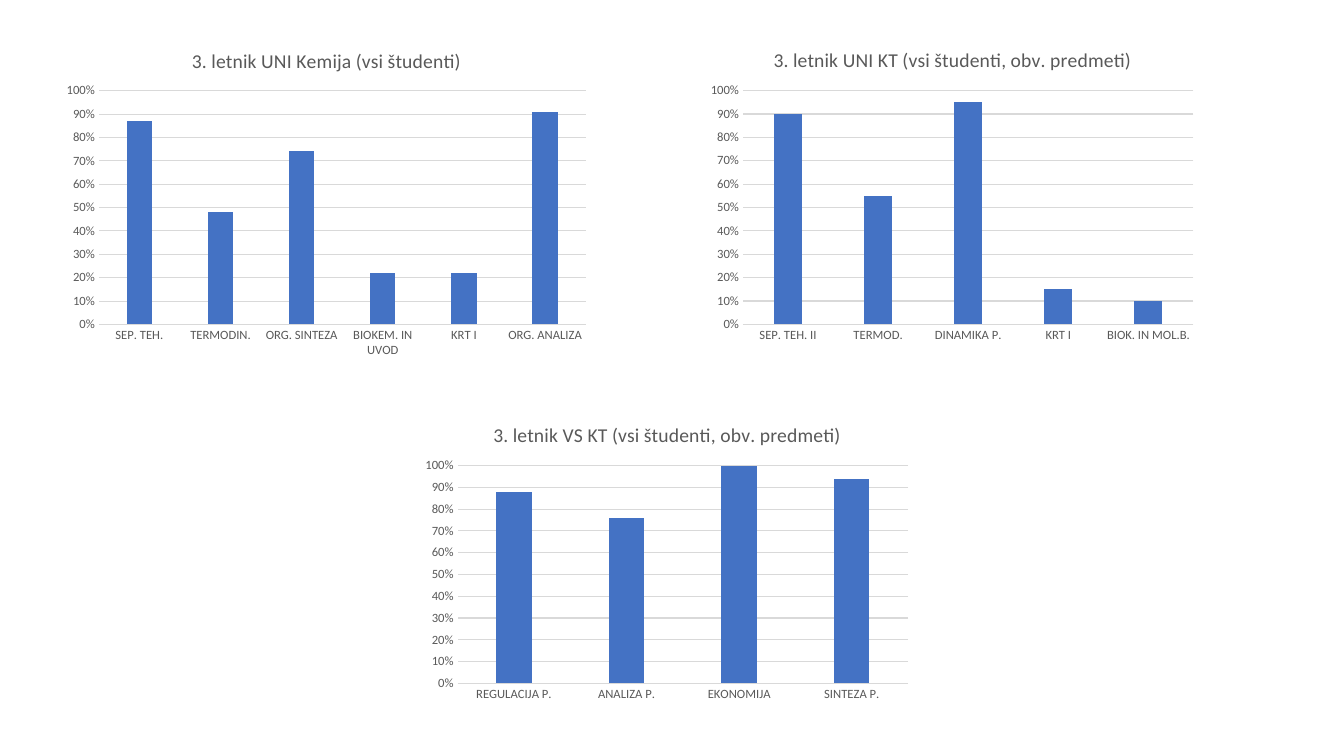
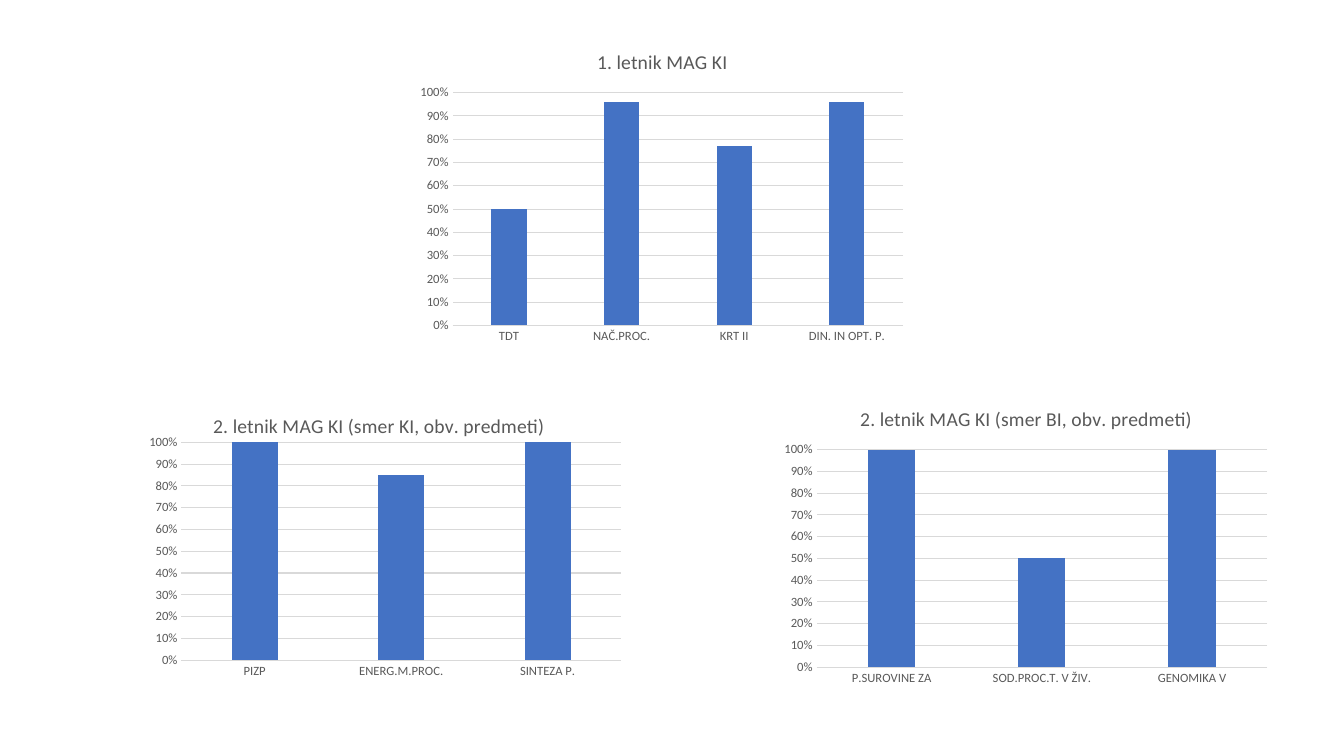
from dataclasses import dataclass

from pptx import Presentation
from pptx import util as u
from pptx.chart.data import CategoryChartData
from pptx.dml.color import RGBColor
from pptx.enum import chart as charts
from pptx.oxml import parse_xml
from pptx.oxml.ns import nsdecls, qn

SLIDE_WIDTH, SLIDE_HEIGHT = u.Inches(13.33), u.Inches(7.5)
FONT = "Calibri"
BLUE = RGBColor(0x44, 0x72, 0xC4)
GREY = RGBColor(0x59, 0x59, 0x59)
LIGHT_GREY = RGBColor(0xD9, 0xD9, 0xD9)

# Space around the plot, in inches: left, top, right, bottom
MARGINS = (0.42, 0.59, 0.11, 0.25)


@dataclass
class Panel:
    """One year's bar chart; box is left, top, width, height in percent of the slide."""
    title: str
    box: tuple
    shares: dict
    margins: tuple = MARGINS


THIRD_YEAR = [
    Panel("3. letnik UNI Kemija (vsi študenti)", (4.2, 4.13, 40.2, 44.13),
          {"SEP. TEH.": 0.87, "TERMODIN.": 0.48, "ORG. SINTEZA": 0.74,
           "BIOKEM. IN UVOD": 0.22, "KRT I": 0.22, "ORG. ANALIZA": 0.91},
          margins=(0.42, 0.59, 0.11, 0.4)),
    Panel("3. letnik VS KT (vsi študenti, obv. predmeti)", (30.9, 53.73, 37.5, 40),
          {"REGULACIJA P.": 0.88, "ANALIZA P.": 0.76, "EKONOMIJA": 1, "SINTEZA P.": 0.94}),
    Panel("3. letnik UNI KT (vsi študenti, obv. predmeti)", (52.13, 4.13, 37.5, 42.13),
          {"SEP. TEH. II": 0.9, "TERMOD.": 0.55, "DINAMIKA P.": 0.95,
           "KRT I": 0.15, "BIOK. IN MOL.B.": 0.1}),
]

MASTERS = [
    Panel("1. letnik MAG KI", (30.53, 4.4, 37.5, 42),
          {"TDT": 0.5, "NAČ.PROC.": 0.96, "KRT II": 0.77, "DIN. IN OPT. P.": 0.96}),
    Panel("2. letnik MAG KI (smer KI, obv. predmeti)", (9.45, 52.53, 37.5, 40),
          {"PIZP": 1, "ENERG.M.PROC.": 0.85, "SINTEZA P.": 1},
          margins=(0.54, 0.45, 0.1, 0.39)),
    Panel("2. letnik MAG KI (smer BI, obv. predmeti)", (57.61, 51.6, 37.5, 40),
          {"P.SUROVINE ZA": 1, "SOD.PROC.T. V ŽIV.": 0.5, "GENOMIKA V": 1}),
]


def style_font(font, size, color=GREY):
    font.name, font.size, font.bold = FONT, u.Pt(size), False
    font.color.rgb = color


def write_text(frame, content, size=14, color=GREY):
    frame.text = content
    style_font(frame.paragraphs[0].runs[0].font, size, color)


def style_line(line):
    line.color.rgb = LIGHT_GREY
    line.width = u.Pt(0.75)


def style_axes(chart):
    for axis in (chart.category_axis, chart.value_axis):
        axis.major_tick_mark = axis.minor_tick_mark = charts.XL_TICK_MARK.NONE
        style_font(axis.tick_labels.font, 9)
    style_line(chart.category_axis.format.line)

    values = chart.value_axis
    values.minimum_scale, values.maximum_scale, values.major_unit = 0, 1, 0.1
    values.tick_labels.number_format = "0%"
    values.tick_labels.number_format_is_linked = False
    values.format.line.fill.background()
    values.has_major_gridlines = True
    style_line(values.major_gridlines.format.line)


def place_plot(chart, width, height, margins):
    """Fix the inner plot area, leaving the margins free inside the chart."""
    left, top, right, bottom = (u.Inches(margin) for margin in margins)
    shares = {"x": left / width, "y": top / height,
              "w": (width - left - right) / width,
              "h": (height - top - bottom) / height}
    entries = "".join(f'<c:{key} val="{share:.4f}"/>' for key, share in shares.items())
    layout = parse_xml(
        f'<c:layout {nsdecls("c")}><c:manualLayout><c:layoutTarget val="inner"/>'
        f'<c:xMode val="edge"/><c:yMode val="edge"/>{entries}</c:manualLayout></c:layout>')
    plot_area = chart.plots[0]._element.getparent()
    for old_layout in plot_area.findall(qn("c:layout")):
        plot_area.remove(old_layout)
    plot_area.insert(0, layout)


def add_panel(slide, panel):
    left, top, width, height = (
        round(percent / 100 * side)
        for percent, side in zip(panel.box, (SLIDE_WIDTH, SLIDE_HEIGHT) * 2))
    data = CategoryChartData(number_format="0%")
    data.categories = list(panel.shares)
    data.add_series("Series 1", list(panel.shares.values()))
    chart = slide.shapes.add_chart(
        charts.XL_CHART_TYPE.COLUMN_CLUSTERED, left, top, width, height, data).chart

    style_font(chart.font, 10, RGBColor(0, 0, 0))
    chart.has_legend = False
    chart.has_title = True
    chart.chart_title.include_in_layout = False
    write_text(chart.chart_title.text_frame, panel.title)

    plot = chart.plots[0]
    plot.gap_width, plot.overlap, plot.vary_by_categories = 219, -27, False
    bars = plot.series[0].format
    bars.fill.solid()
    bars.fill.fore_color.rgb = BLUE
    bars.line.fill.background()
    style_axes(chart)
    place_plot(chart, width, height, panel.margins)


def main():
    presentation = Presentation()
    presentation.slide_width, presentation.slide_height = SLIDE_WIDTH, SLIDE_HEIGHT
    for panels in (THIRD_YEAR, MASTERS):
        slide = presentation.slides.add_slide(presentation.slide_layouts[6])
        for panel in panels:
            add_panel(slide, panel)
    presentation.save("out.pptx")


if __name__ == "__main__":
    main()
